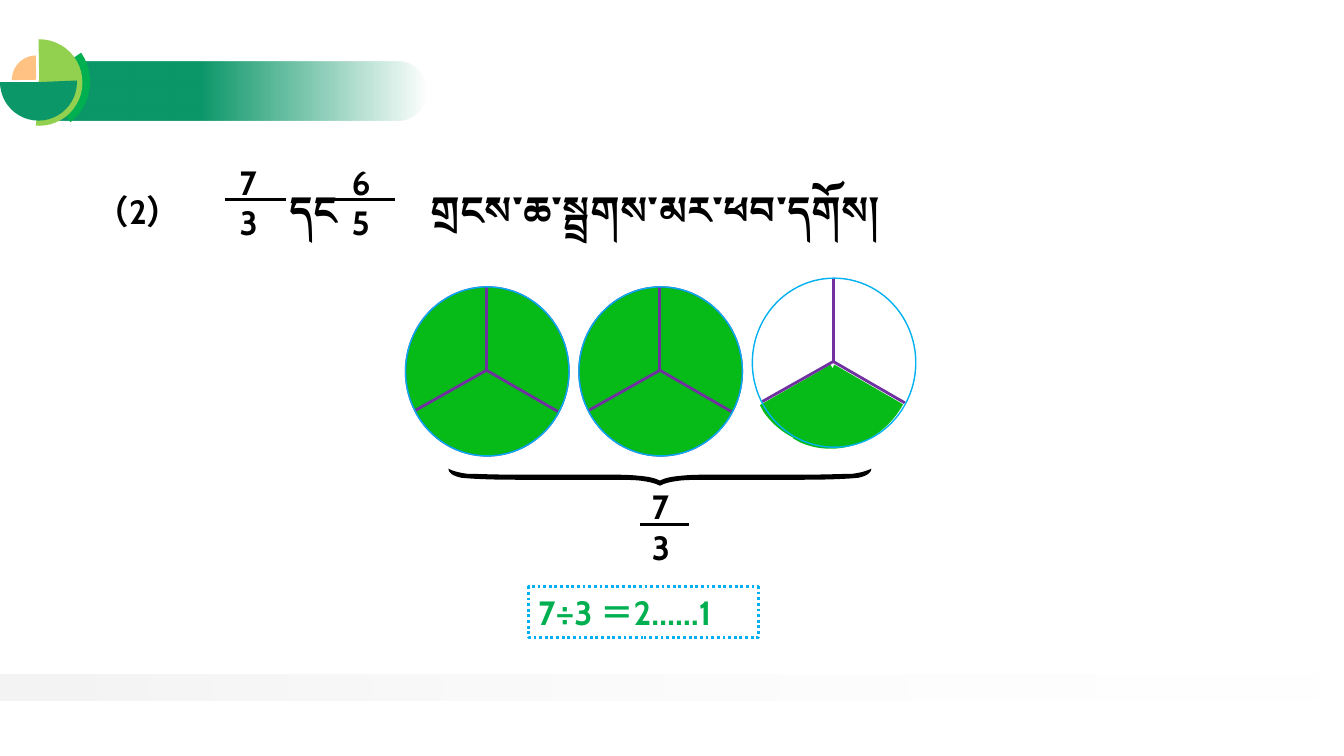
from dataclasses import dataclass

from lxml import etree
from pptx import Presentation
from pptx.dml.color import RGBColor
from pptx.enum.dml import MSO_LINE
from pptx.enum.shapes import MSO_CONNECTOR, MSO_SHAPE
from pptx.oxml.ns import qn
from pptx.util import Cm, Pt

STRAIGHT = MSO_CONNECTOR.STRAIGHT
ELLIPSE = MSO_SHAPE.OVAL
PIE = MSO_SHAPE.PIE
CAPSULE = MSO_SHAPE.ROUNDED_RECTANGLE
ROUND_TOP = MSO_SHAPE.ROUND_2_SAME_RECTANGLE
DOTTED = MSO_LINE.ROUND_DOT


@dataclass(frozen=True)
class Theme:
    font: str = "Cabin"
    text_size: int = 24
    tibetan_size: int = 28
    thin: float = 1
    thick: float = 2
    ink: str = "000000"
    teal: str = "0C9769"
    green: str = "00B050"
    lime: str = "92D050"
    peach: str = "FFC283"
    slice: str = "06BA17"
    spoke: str = "7030A0"
    rim: str = "00B0F0"
    grey: str = "D9D9D9"
    pale_grey: str = "F2F2F2"


class SlideBuilder:
    def __init__(self, page, theme):
        self.page = page
        self.theme = theme

    def paint(self, shape, fill=None, line=None):
        shape.shadow.inherit = False
        if fill:
            shape.fill.solid()
            shape.fill.fore_color.rgb = RGBColor.from_string(fill)
        else:
            shape.fill.background()
        if line:
            shape.line.color.rgb = RGBColor.from_string(line)
            shape.line.width = Pt(self.theme.thin)
        else:
            shape.line.fill.background()
        return shape

    def shape(self, kind, left, top, width, height, fill=None, line=None):
        shape = self.page.shapes.add_shape(kind, Cm(left), Cm(top), Cm(width), Cm(height))
        return self.paint(shape, fill, line)

    def pie(self, left, top, size, start, end, fill):
        pie = self.shape(PIE, left, top, size, size, fill)
        pie.adjustments[0] = start * 0.6
        pie.adjustments[1] = end * 0.6

    def fade(self, shape, angle, stops):
        shape.fill.gradient()
        shape.fill.gradient_angle = angle
        for stop, (position, color, _) in zip(shape.fill.gradient_stops, stops):
            stop.position = position
            stop.color.rgb = RGBColor.from_string(color)
        colors = shape.element.spPr.iter(qn("a:srgbClr"))
        for color, (_, _, opacity) in zip(colors, stops):
            etree.SubElement(color, qn("a:alpha")).set("val", str(opacity * 1000))

    def outline(self, points, sizes, fill):
        corners = [(Cm(x), Cm(y)) for x, y in points]
        builder = self.page.shapes.build_freeform(*corners[0])
        builder.add_line_segments(corners[1:], close=True)
        shape = self.paint(builder.convert_to_shape(), fill)
        steps = iter(list(shape.element.spPr.iter(qn("a:lnTo"))))
        for size in sizes:
            first, *others = [next(steps) for _ in range(size)]
            if others:
                first.tag = qn("a:cubicBezTo")
                for other in others:
                    first.append(other[0])
                    other.getparent().remove(other)

    def line(self, start, end, color):
        line = self.page.shapes.add_connector(
            STRAIGHT, Cm(start[0]), Cm(start[1]), Cm(end[0]), Cm(end[1]))
        line.line.color.rgb = RGBColor.from_string(color)
        line.line.width = Pt(self.theme.thick)
        etree.SubElement(line.element.spPr, qn("a:effectLst"))

    def text(self, left, top, width, height, rows, color, tabs=()):
        box = self.page.shapes.add_textbox(Cm(left), Cm(top), Cm(width), Cm(height))
        frame = box.text_frame
        frame.word_wrap = True
        for index, row in enumerate(rows):
            para = frame.add_paragraph() if index else frame.paragraphs[0]
            if tabs:
                tab_list = etree.SubElement(para._p.get_or_add_pPr(), qn("a:tabLst"))
                for position in tabs:
                    tab = etree.SubElement(tab_list, qn("a:tab"))
                    tab.set("pos", str(Cm(position)))
                    tab.set("algn", "l")
            for words, size in row:
                span = para.add_run()
                span.text = words
                span.font.name = self.theme.font
                span.font.size = Pt(size)
                span.font.bold = True
                span.font.color.rgb = RGBColor.from_string(color)
        return box

    def fraction(self, numerator, denominator, left, top, bar_left, bar_width):
        rows = [[(number, self.theme.text_size)] for number in (numerator, denominator)]
        self.text(left, top, 1.73, 2.31, rows, self.theme.ink)
        bar_top = top + 1.08
        self.line((bar_left, bar_top), (bar_left + bar_width, bar_top), self.theme.ink)

    def thirds_circle(self, left, top, filled):
        frame = (left, top, 4.12, 4.26)
        if filled:
            self.shape(ELLIPSE, *frame, self.theme.slice, self.theme.spoke)
        for x, y in ((3.84, 3.14), (0.25, 3.11), (2.04, 0)):
            self.line((left + 2.04, top + 2.1), (left + x, top + y), self.theme.spoke)
        self.shape(ELLIPSE, *frame, line=self.theme.rim)

    def brace(self, center, top, half, sizes):
        left_side = [(center - x, top + y) for x, y in half]
        right_side = [(center + x, top + y) for x, y in reversed(half[:-1])]
        self.outline(left_side + right_side, sizes + sizes[::-1], self.theme.ink)


BRACE_HALF = [
    (0, 0.3),
    (0.13, 0.23), (0.3, 0.2), (0.53, 0.18),
    (0.76, 0.15), (1.14, 0.15), (1.63, 0.15),
    (3.78, 0.15),
    (4.24, 0.15), (4.62, 0.13), (4.85, 0.13),
    (5.08, 0.1), (5.24, 0.05), (5.33, 0),
    (5.33, 0.1), (5.23, 0.18), (5, 0.23),
    (4.83, 0.25), (4.32, 0.28), (3.63, 0.28),
    (1.45, 0.28),
    (1.02, 0.28), (0.71, 0.28), (0.51, 0.3),
    (0.28, 0.33), (0.13, 0.36), (0, 0.43),
]
BRACE_SIZES = [3, 3, 1, 3, 3, 3, 3, 1, 3, 3]
SECTOR_SIZES = [1, 3, 1]
SECTORS = (
    [(21.03, 9.19), (22.76, 10.19), (22.23, 11.15), (21.11, 11.56), (20.17, 11.15), (19.99, 11.05)],
    [(20.93, 9.19), (21.97, 10.97), (21.03, 11.51), (19.86, 11.25), (19.25, 10.39), (19.15, 10.21)],
)


def main():
    deck = Presentation()
    deck.slide_width, deck.slide_height = Cm(33.87), Cm(19.05)
    theme = Theme()
    page = SlideBuilder(deck.slides.add_slide(deck.slide_layouts[6]), theme)

    banner = page.shape(ROUND_TOP, 5.31, -2.41, 1.47, 9.4)
    banner.adjustments[0] = 0.5
    banner.rotation = 90
    page.fade(banner, 90, [(0.39, theme.teal, 100), (1, theme.teal, 0)])
    page.pie(-0.33, 0.76, 2.6, 325.8, 51.6, theme.green)
    page.pie(-0.1, 0.99, 2.18, 269.1, 94.4, theme.lime)
    page.pie(0, 1.1, 1.94, 357.6, 180, theme.teal)
    page.pie(0.3, 1.4, 1.22, 179, 269.5, theme.peach)
    footer = page.shape(CAPSULE, -0.33, 16.99, 34.19, 0.66)
    footer.adjustments[0] = 0.5
    page.fade(footer, 0, [(0, theme.grey, 31), (1, theme.pale_grey, 0)])

    page.fraction("6", "5", 8.61, 3.95, 8.41, 1.55)
    page.fraction("7", "3", 5.79, 3.95, 5.66, 1.55)
    question = [("（2）\t", theme.text_size), ("དང\t", theme.tibetan_size),
                ("གྲངས་ཆ་སྦྲགས་མར་ཕབ་དགོས།", theme.tibetan_size)]
    page.text(2.16, 4.55, 26.57, 3.23, [question], theme.ink, tabs=(4.88, 8.44))

    for sector in SECTORS:
        page.outline(sector, SECTOR_SIZES, theme.slice)
    for index, (top, filled) in enumerate(((7.23, True), (7.23, True), (7.01, False))):
        page.thirds_circle(10.22 + 4.37 * index, top, filled)
    page.brace(16.63, 11.81, BRACE_HALF, BRACE_SIZES)
    page.fraction("7", "3", 16.18, 12.13, 16.13, 1.24)

    answer = page.text(13.32, 14.79, 5.79, 1.28, [[("7÷3 ＝2……1", theme.text_size)]], theme.green)
    answer.line.color.rgb = RGBColor.from_string(theme.rim)
    answer.line.width = Pt(theme.thick)
    answer.line.dash_style = DOTTED
    deck.save("out.pptx")


if __name__ == "__main__":
    main()
